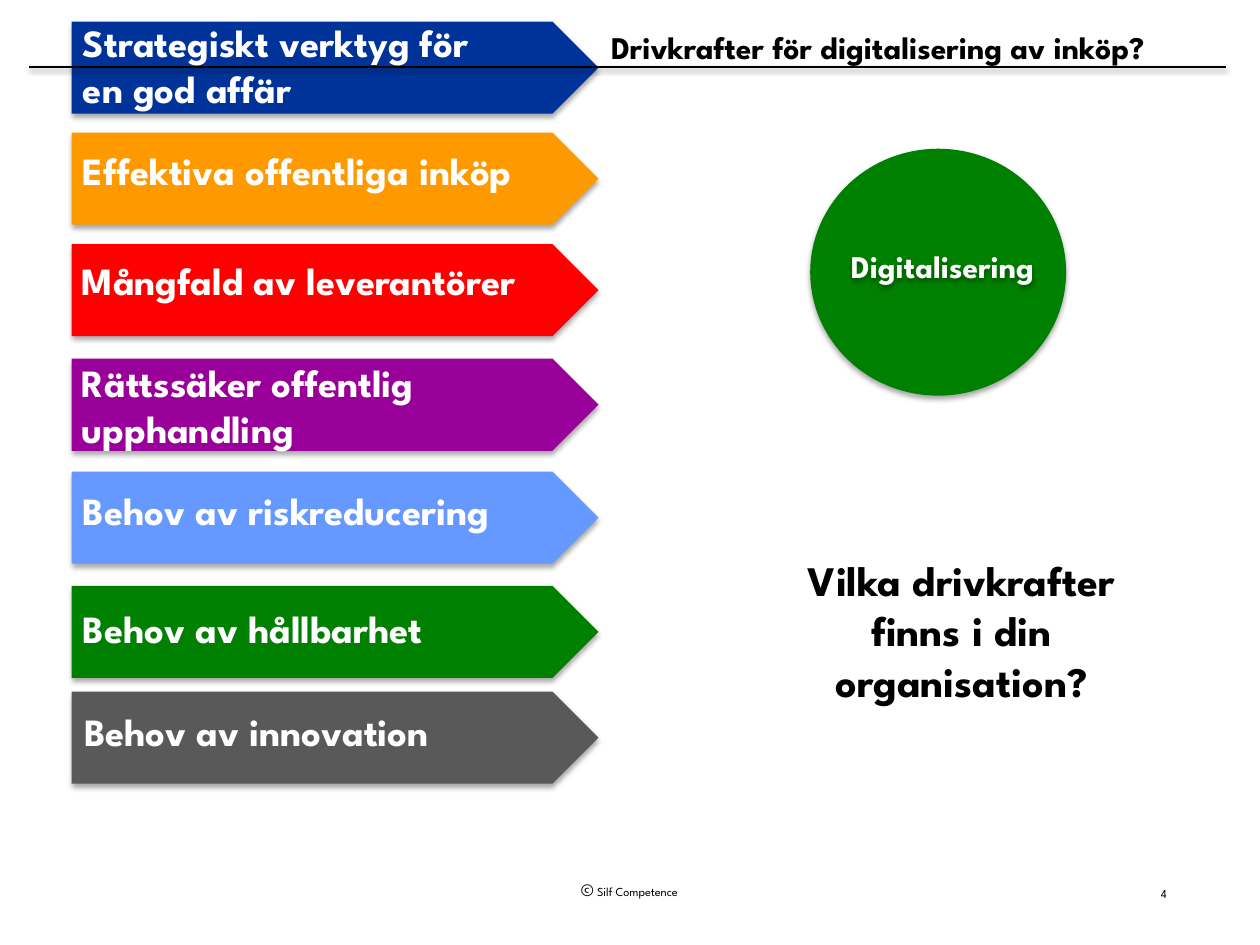
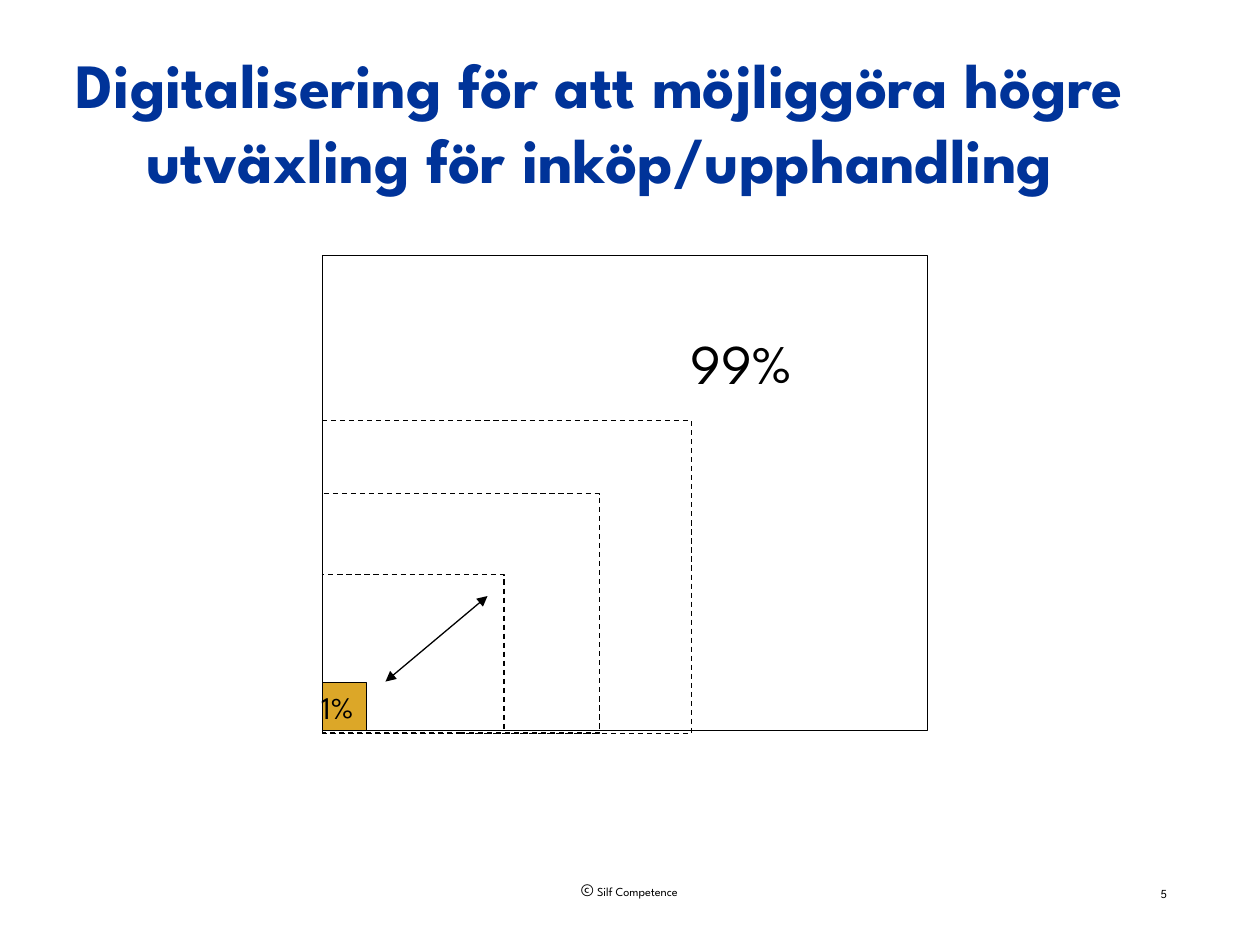
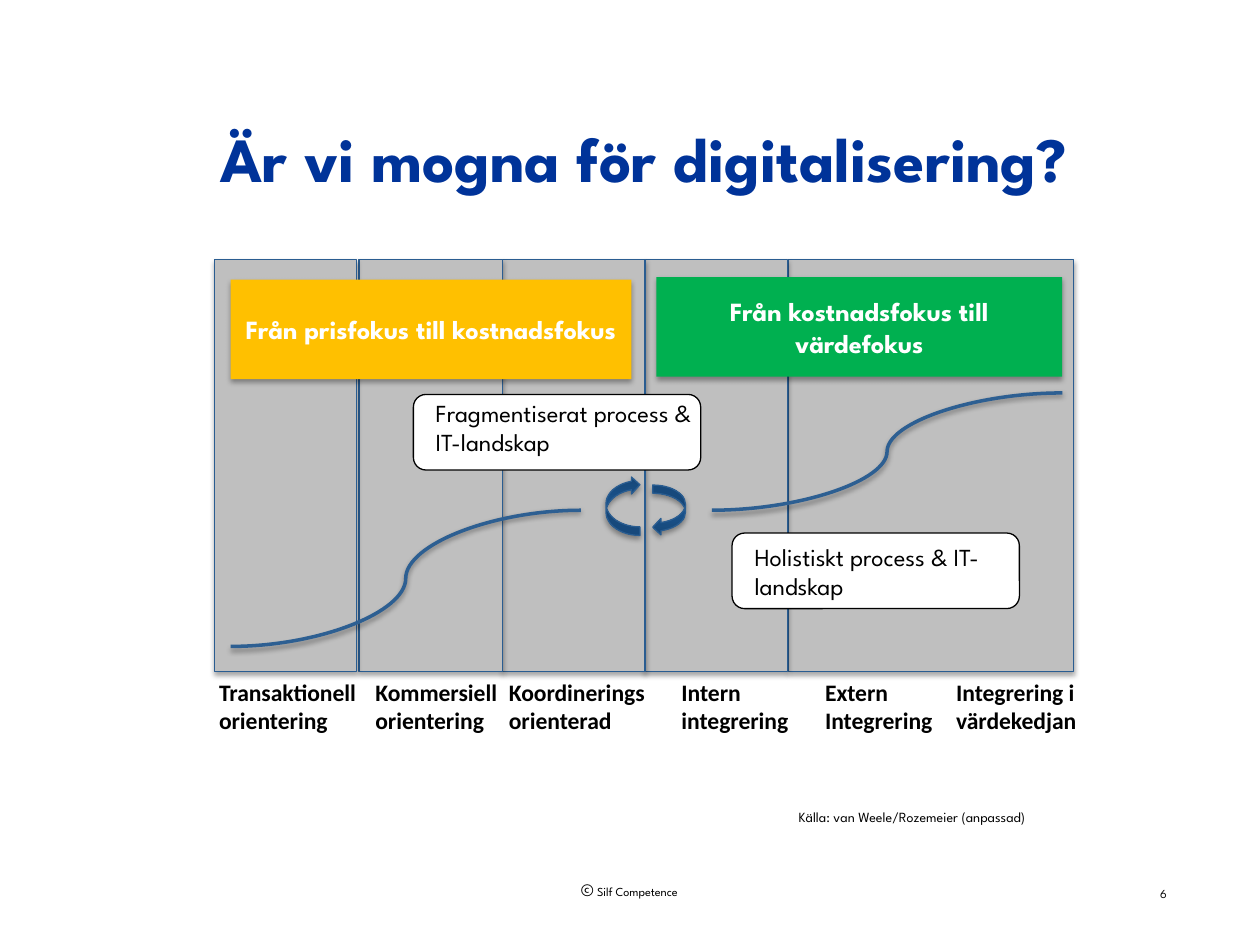
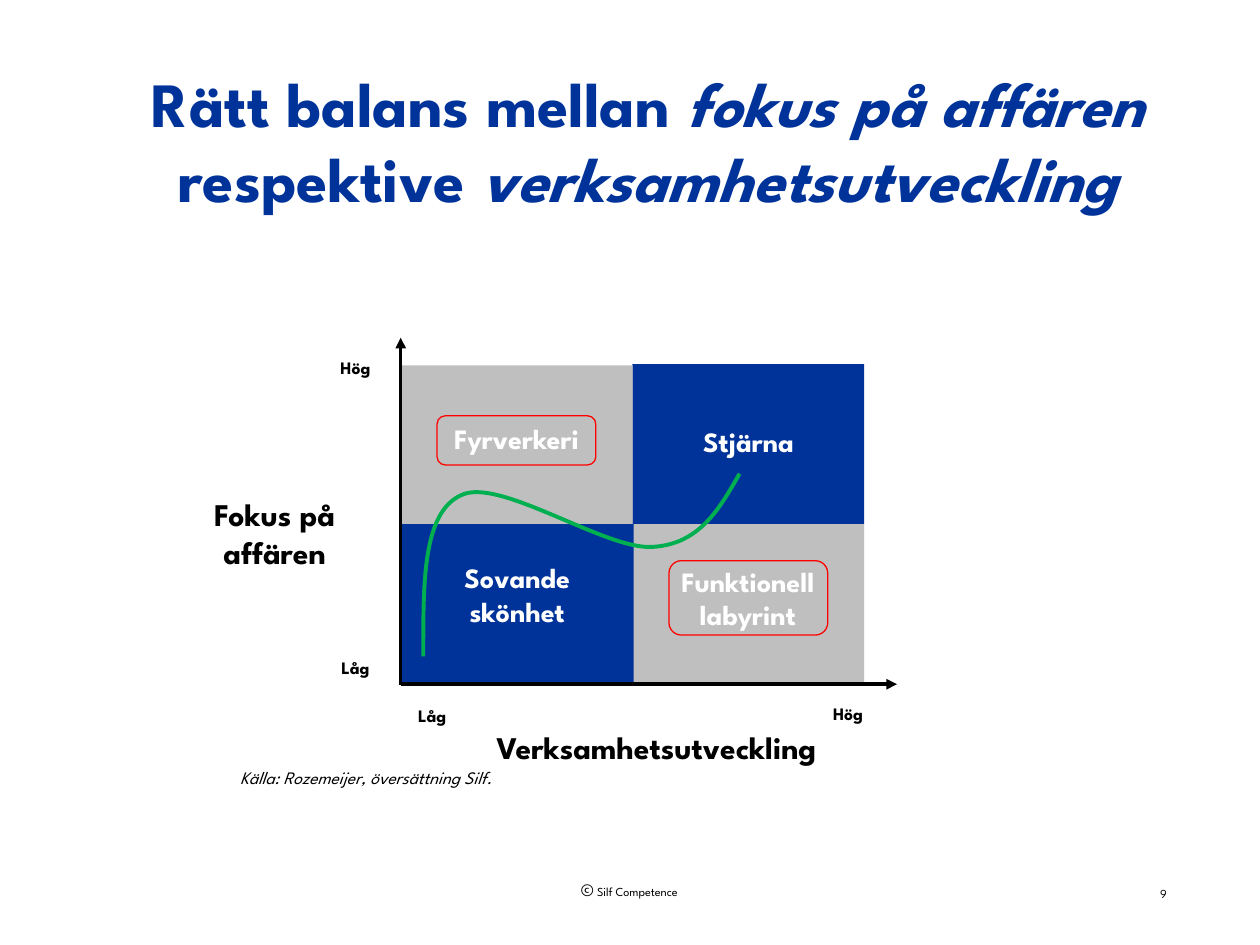
from lxml.etree import SubElement
from pptx import Presentation
from pptx.dml.color import RGBColor
from pptx.enum.dml import MSO_LINE
from pptx.enum.shapes import MSO_CONNECTOR as CONNECTOR, MSO_SHAPE as SHAPE
from pptx.enum.text import MSO_ANCHOR as ANCHOR, MSO_AUTO_SIZE as AUTO, PP_ALIGN as ALIGN
from pptx.oxml.ns import qn
from pptx.util import Pt

# Shared look
SPARTAN, CALIBRI = "League Spartan", "Calibri"
BLACK, WHITE, NAVY, GREY = "000000", "FFFFFF", "003399", "BFBFBF"
GREEN, LEAF, RED, STEEL = "008000", "00B050", "FF0000", "2A5D91"
SHAPE_SHADOW = (35, 3.1, 1.8)  # opacity %, blur, distance
LINE_SHADOW = (38, 3.1, 1.6)
COPYRIGHT = [("©", {"size": 10}), (" Silf Competence", {})]
COPYRIGHT_BOX = (318.2, 499, 82.8, 19.4)
NUMBER_BOX = (626.4, 502.6, 47.5, 15.8)

# Slide 4: label, colour, arrow top, label box
DRIVERS = [
    ("Strategiskt verktyg för en god affär", NAVY, 12.4, (40.3, 7.2, 260.6, 60.5)),
    ("Effektiva offentliga inköp", "FF9900", 75.8, (40.3, 80.6, 291.6, 33.8)),
    ("Mångfald av leverantörer", RED, 139.5, (39.6, 143.3, 316.1, 33.8)),
    ("Rättssäker offentlig upphandling", "990099", 205, (39.6, 201.6, 324.7, 60.5)),
    ("Behov av riskreducering", "6699FF", 269.5, (40.3, 275, 318.2, 33.8)),
    ("Behov av hållbarhet", GREEN, 334.8, (40.3, 342, 339.8, 33.8)),
    ("Behov av innovation", "595959", 395.2, (41, 401, 306.7, 33.8)),
]

# Slide 5: squares growing from one corner: width, height, bottom
CORNER_LEFT, CORNER_BOTTOM = 184.3, 417.6
GROWTH = [(103.7, 89.3, 417.6), (158.4, 136.8, 419), (211, 178.6, 419)]

# Slide 6
PANEL_TOP, PANEL_HEIGHT = 148.3, 235.4
PANELS = [(122.4, 81.4), (205.2, 82.1), (287.3, 81.4), (368.6, 81.4), (450.7, 162.7)]
STAGES = [
    ("Transaktionell orientering", 118.1, 95.8),
    ("Kommersiell orientering", 207.4, 95.8),
    ("Koordinerings orienterad", 283.7, 95.8),
    ("Intern integrering", 382.3, 80.6),
    ("Extern Integrering", 464.4, 95.8),
    ("Integrering i värdekedjan", 539.3, 95.8),
]
BANNERS = [
    ("Från prisfokus till kostnadsfokus", "FFC000", (131.8, 159.8, 229, 56.9)),
    ("Från kostnadsfokus till värdefokus", LEAF, (375.1, 158.4, 231.8, 56.9)),
]
SWIRLS = [
    (SHAPE.CURVED_RIGHT_ARROW, (346.3, 272.2, 19.4, 33.8), True),
    (SHAPE.CURVED_LEFT_ARROW, (373, 277.2, 18.7, 28.8), False),
]
S_CURVES = [((131.8, 369.4), (331.9, 291.6)), ((406.8, 291.6), (607, 224.6))]
NOTES = [
    ("Fragmentiserat process & IT-landskap", (236.2, 225.4), (241.9, 223.9)),
    ("Holistiskt process & IT-landskap", (418.3, 304.6), (424.1, 306)),
]

# Slide 9
QUADRANTS = [(361.4, 208.1, NAVY), (361.4, 299.5, GREY), (229, 208.8, GREY), (229.7, 299.5, NAVY)]
QUADRANT_SIZE = (132.5, 91.4)
QUADRANT_LABELS = [
    ("Fyrverkeri", (229.7, 237.6, 131, 26.6)),
    ("Stjärna", (358.6, 239, 138.2, 26.6)),
    ("Sovande skönhet", (241.9, 316.8, 107.3, 46.1)),
    ("Funktionell labyrint", (370.1, 319, 114.5, 46.1)),
]
AXES = [((229, 193), (229, 391.7), "headEnd"), ((229, 391), (512.6, 391), "tailEnd")]
AXIS_TITLES = [
    ("Fokus på affären", (100.1, 279.4, 113.8, 50.4)),
    ("Verksamhetsutveckling", (265.7, 412.6, 218.9, 28.8)),
]
AXIS_ENDS = [("Hög", 178.6, 200.2), ("Låg", 178.6, 372.2), ("Hög", 460.1, 398.2), ("Låg", 222.5, 399.6)]
FRAMES = [(249.8, 237.6, 90.7, 28.1), (382.3, 320.4, 90.7, 42.5)]
PATH_POINTS = [
    (241.9, 375.1),
    (241.9, 334.1), (241.2, 293), (263.5, 283),
    (285.1, 272.2), (346.3, 314.6), (373, 312.5),
    (399.6, 311), (411.1, 290.9), (422.6, 270.7),
]


def color(value):
    return RGBColor.from_string(value)


def points(values):
    return [Pt(value) for value in values]


def write(frame, runs, size, fill=BLACK, bold=False, italic=False, align=ALIGN.LEFT,
          font=SPARTAN, anchor=ANCHOR.TOP, auto=AUTO.SHAPE_TO_FIT_TEXT, wrap=True):
    """Fill a text frame with one paragraph; runs is a string or (text, changes) pairs."""
    frame.word_wrap = wrap
    frame.auto_size = auto
    frame.vertical_anchor = anchor
    paragraph = frame.paragraphs[0]
    paragraph.alignment = align
    for text, changes in [(runs, {})] if isinstance(runs, str) else runs:
        run = paragraph.add_run()
        run.text = text
        run.font.name = font
        run.font.size = Pt(changes.get("size", size))
        run.font.bold = bold
        run.font.italic = changes.get("italic", italic)
        run.font.color.rgb = color(fill)


def add_text(slide, box, runs, size, **style):
    shape = slide.shapes.add_textbox(*points(box))
    write(shape.text_frame, runs, size, **style)
    return shape


def set_effects(shape, shadow):
    """Replace the theme shadow by the given one, or by none."""
    properties = shape.element.spPr
    effects = properties.find(qn("a:effectLst"))
    if effects is None:
        effects = SubElement(properties, qn("a:effectLst"))
    if shadow:
        opacity, blur, distance = shadow
        outer = SubElement(effects, qn("a:outerShdw"), blurRad=str(Pt(blur)),
                           dist=str(Pt(distance)), dir="5400000", rotWithShape="0")
        black = SubElement(outer, qn("a:srgbClr"), val=BLACK)
        SubElement(black, qn("a:alpha"), val=str(opacity * 1000))


def paint(shape, fill=None, line=None, width=0.75, dash=None, shadow=None):
    shape.shadow.inherit = False
    if fill:
        shape.fill.solid()
        shape.fill.fore_color.rgb = color(fill)
    else:
        shape.fill.background()
    if line:
        shape.line.color.rgb = color(line)
        shape.line.width = Pt(width)
        if dash:
            shape.line.dash_style = dash
    else:
        shape.line.fill.background()
    set_effects(shape, shadow)


def add_shape(slide, kind, box, **look):
    shape = slide.shapes.add_shape(kind, *points(box))
    paint(shape, **look)
    return shape


def add_line(slide, start, end, line=BLACK, width=0.75, arrows=(), shadow=None,
             kind=CONNECTOR.STRAIGHT):
    connector = slide.shapes.add_connector(kind, *points(start + end))
    connector.line.color.rgb = color(line)
    connector.line.width = Pt(width)
    outline = connector.element.spPr.find(qn("a:ln"))
    for arrow in arrows:
        SubElement(outline, qn("a:" + arrow), type="triangle")
    set_effects(connector, shadow)


def add_curve(slide, route, line, width):
    """Draw cubic curves: a start point, then three points for each curve."""
    start, *rest = [points(point) for point in route]
    builder = slide.shapes.build_freeform(*start)
    builder.add_line_segments(rest, close=False)
    shape = builder.convert_to_shape()
    track = next(shape.element.iter(qn("a:path")))
    segments = track.findall(qn("a:lnTo"))
    for first in range(0, len(segments), 3):
        curve = SubElement(track, qn("a:cubicBezTo"))
        for segment in segments[first:first + 3]:
            curve.append(segment[0])
            track.remove(segment)
    paint(shape, line=line, width=width)


def add_slide(presentation, number, box, title, size=36, fill=NAVY, align=ALIGN.CENTER):
    """Start a title-only slide with its footer."""
    slide = presentation.slides.add_slide(presentation.slide_layouts[5])
    add_text(slide, COPYRIGHT_BOX, COPYRIGHT, 7, align=ALIGN.CENTER, wrap=False)
    add_text(slide, NUMBER_BOX, number, 7, align=ALIGN.RIGHT)
    holder = slide.shapes.title
    holder.left, holder.top, holder.width, holder.height = points(box)
    write(holder.text_frame, title, size, fill=fill, bold=True, align=align, auto=AUTO.NONE)
    return slide


def build_drivers(presentation):
    slide = add_slide(presentation, "4", (342, 12.2, 366.5, 28.8),
                      "Drivkrafter för digitalisering av inköp?", 18, BLACK, ALIGN.LEFT)
    for _, fill, top, _ in DRIVERS:
        add_shape(slide, SHAPE.PENTAGON, (41, top, 301, 52.6), fill=fill, shadow=SHAPE_SHADOW)
    add_line(slide, (16.6, 38.2), (700.6, 38.2), width=1, shadow=LINE_SHADOW)
    for label, _, _, box in DRIVERS:
        add_text(slide, box, label, 22, fill=WHITE, bold=True)

    add_shape(slide, SHAPE.OVAL, (463, 85, 146.2, 141.1), fill=GREEN, shadow=SHAPE_SHADOW)
    core = add_text(slide, (473.8, 131, 129.6, 41.8), "Digitalisering", 18, fill=WHITE, bold=True,
                    align=ALIGN.CENTER, anchor=ANCHOR.MIDDLE, auto=AUTO.NONE)
    set_effects(core, SHAPE_SHADOW)
    add_text(slide, (441.4, 313.2, 216, 94.3), "Vilka drivkrafter finns i din organisation?",
             24, bold=True, align=ALIGN.CENTER)


def build_leverage(presentation):
    slide = add_slide(presentation, "5", (10.8, 22.3, 663.8, 90),
                      "Digitalisering för att möjliggöra högre utväxling för inköp/upphandling")

    def add_square(width, height, bottom=CORNER_BOTTOM, **look):
        box = (CORNER_LEFT, bottom - height, width, height)
        add_shape(slide, SHAPE.RECTANGLE, box, line=BLACK, **look)

    add_square(345.6, 271.4)
    add_text(slide, (387.4, 184.3, 105.8, 46.1), "99%", 32)
    add_square(25.2, 27.4, fill="DCA728")
    add_text(slide, (176.4, 389.5, 43.9, 28.8), "1%", 18)
    for width, height, bottom in GROWTH:
        add_square(width, height, bottom, dash=MSO_LINE.DASH)
    add_line(slide, (220.3, 389.5), (278.6, 340.6), arrows=("headEnd", "tailEnd"))


def build_maturity(presentation):
    slide = add_slide(presentation, "6", (61.9, 64.8, 612, 90), "Är vi mogna för digitalisering?")
    for left, width in reversed(PANELS):
        add_shape(slide, SHAPE.RECTANGLE, (left, PANEL_TOP, width, PANEL_HEIGHT),
                  fill=GREY, line=STEEL, shadow=SHAPE_SHADOW)
    for label, fill, box in BANNERS:
        banner = add_shape(slide, SHAPE.RECTANGLE, box, fill=fill, shadow=SHAPE_SHADOW)
        write(banner.text_frame, label, 15, fill=WHITE, bold=True, align=ALIGN.CENTER,
              anchor=ANCHOR.MIDDLE, auto=AUTO.NONE)
    for label, left, width in STAGES:
        add_text(slide, (left, PANEL_TOP + PANEL_HEIGHT, width, 40.3), label, 13.5,
                 bold=True, font=CALIBRI)

    # Turning arrows between the two growth curves
    for kind, box, flipped in SWIRLS:
        swirl = add_shape(slide, kind, box, line=STEEL, shadow=SHAPE_SHADOW)
        swirl.fill.gradient()
        swirl.fill.gradient_angle = 90
        for stop, (position, value) in zip(swirl.fill.gradient_stops, [(0, "164778"), (0.8, "1D5C9C")]):
            stop.position = position
            stop.color.rgb = color(value)
        if flipped:
            swirl.element.spPr.xfrm.set("flipV", "1")
    for start, end in S_CURVES:
        add_line(slide, start, end, "2D5F92", 2, shadow=LINE_SHADOW, kind=CONNECTOR.CURVE)

    for label, corner, text_corner in NOTES:
        add_shape(slide, SHAPE.ROUNDED_RECTANGLE, corner + (164.2, 43.2), fill=WHITE, line=BLACK)
        add_text(slide, text_corner + (163.4, 41), label, 14)
    add_text(slide, (449.3, 458.6, 185.8, 17.3), "Källa: van Weele/Rozemeier (anpassad)", 8)


def build_balance(presentation):
    slant = {"italic": True}
    slide = add_slide(presentation, "9", (51.8, 36.7, 637.2, 87.1), [
        ("Rätt balans mellan ", {}), ("fokus på affären ", slant),
        ("respektive ", {}), ("verksamhetsutveckling", slant)])
    frame = slide.shapes.title.text_frame
    frame.margin_left = frame.margin_top = frame.margin_right = frame.margin_bottom = 0

    # Matrix and axes
    for left, top, fill in QUADRANTS:
        add_shape(slide, SHAPE.RECTANGLE, (left, top) + QUADRANT_SIZE, fill=fill)
    for label, box in QUADRANT_LABELS:
        add_text(slide, box, label, 16, fill=WHITE, bold=True, align=ALIGN.CENTER)
    for start, end, arrow in AXES:
        add_line(slide, start, end, width=2, arrows=(arrow,))
    for label, box in AXIS_TITLES:
        add_text(slide, box, label, 18, bold=True, align=ALIGN.CENTER)
    for label, left, top in AXIS_ENDS:
        add_text(slide, (left, top, 49, 19.4), label, 10, bold=True, align=ALIGN.CENTER)

    # Marked quadrants and the way between them
    for box in FRAMES:
        add_shape(slide, SHAPE.ROUNDED_RECTANGLE, box, line=RED)
    add_curve(slide, PATH_POINTS, LEAF, 2.25)
    add_text(slide, (107.3, 434.9, 203.8, 19.4), "Källa: Rozemeijer, översättning Silf.", 10,
             italic=True, align=ALIGN.CENTER)


def main():
    presentation = Presentation()
    presentation.slide_width, presentation.slide_height = Pt(720), Pt(540)
    for build in (build_drivers, build_leverage, build_maturity, build_balance):
        build(presentation)
    presentation.save("out.pptx")


if __name__ == "__main__":
    main()
